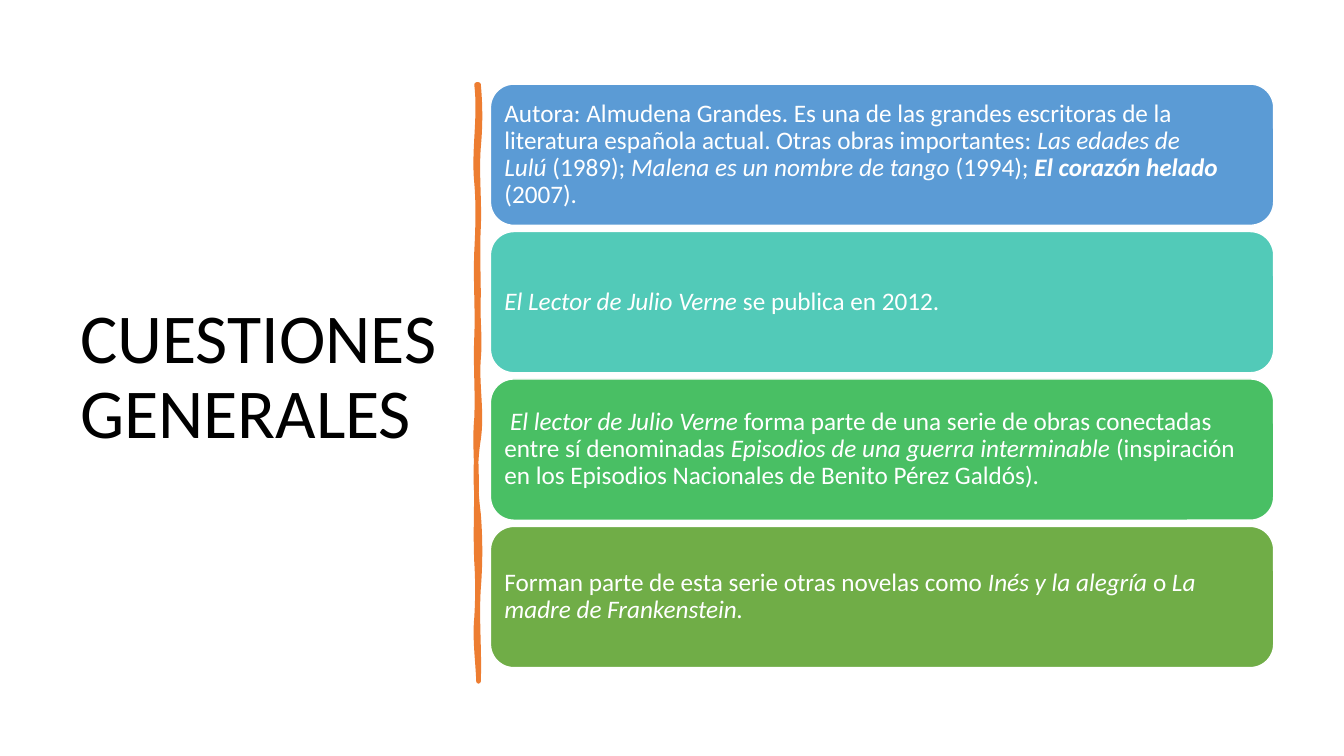
from lxml import etree
from pptx import Presentation
from pptx.dml.color import RGBColor
from pptx.enum.shapes import MSO_SHAPE
from pptx.enum.text import MSO_ANCHOR, PP_ALIGN
from pptx.oxml.ns import qn
from pptx.util import Cm, Pt

ROUND = MSO_SHAPE.ROUNDED_RECTANGLE
MIDDLE = MSO_ANCHOR.MIDDLE
LEFT = PP_ALIGN.LEFT
HARD = chr(160)  # no-break space, typed as ~ in the card texts


def color(code):
    return RGBColor.from_string(code)


def style(run, size, code):
    run.font.name = "Calibri"
    run.font.size = Pt(size)
    run.font.color.rgb = color(code)


deck = Presentation()
deck.slide_width, deck.slide_height = Cm(33.87), Cm(19.05)
slide = deck.slides.add_slide(deck.slide_layouts[6])
shapes = slide.shapes

# Title
title = shapes.add_textbox(Cm(1.77), Cm(1.77), Cm(9.5), Cm(15.52))
frame = title.text_frame
frame.word_wrap = True
frame.vertical_anchor = MIDDLE
frame.margin_right = 0
frame.text = "CUESTIONES GENERALES"
frame.paragraphs[0].line_spacing = 0.9
style(frame.paragraphs[0].runs[0], 50, "000000")

# Wavy divider: each bend holds two sideways pulls and the height where it ends
TOP = 2.13
down = [(0.05, 0.05, 3.71), (-0.05, 0.03, 5.74), (-0.03, 0, 7.47),
        (-0.03, 0.05, 9.04), (-0.05, 0.1, 11.07), (-0.1, -0.08, 12.95),
        (0.05, 0.05, 14.83), (-0.05, 0.03, 17.17)]
up = [(0.03, -0.05, 15.57), (0.03, 0.03, 14.15), (-0.03, 0, 12.12),
      (0, -0.05, 10.54), (0.03, -0.03, 8.51), (0.03, -0.03, 6.35),
      (0.03, 0.05, 4.6), (-0.08, 0.1, TOP)]
pen = shapes.build_freeform(Cm(12.06), Cm(TOP))
start = TOP
for edge, bends in ((12.06, down), (12.01, up)):
    for first, second, end in bends:
        third = (end - start) / 3
        pen.add_line_segments([
            (Cm(edge + first), Cm(start + third)),
            (Cm(edge + second), Cm(end - third)),
            (Cm(edge), Cm(end))], close=False)
        start = end
pen.add_line_segments([], close=True)
wave = pen.convert_to_shape()
wave.shadow.inherit = False
wave.fill.solid()
wave.fill.fore_color.rgb = color("ED7D31")
wave.line.color.rgb = color("ED7D31")
wave.line.width = Pt(3.25)

# Turn every three straight steps into one curve
steps = list(wave._element.iter(qn("a:lnTo")))
for i in range(0, len(steps), 3):
    curve = etree.Element(qn("a:cubicBezTo"))
    steps[i].addprevious(curve)
    for step in steps[i:i + 3]:
        curve.append(step[0])
        step.getparent().remove(step)

# Cards: fill, then text parts with their style (i italic, b bold)
cards = [
    ("5B9BD5", [
        ("Autora: Almudena Grandes. Es una de las grandes escritoras~de la "
         "literatura española actual.~Otras obras importantes: ", ""),
        ("Las edades de Lulú", "i"), ("~(1989);~", ""),
        ("Malena es un nombre de tango ", "i"), ("(1994); ", ""),
        ("El corazón helado ", "bi"), ("(2007).", "")]),
    ("52CAB8", [
        ("El Lector de Julio Verne ", "i"), ("se publica en 2012.", "")]),
    ("49BF64", [
        ("~", ""), ("El lector de Julio Verne ", "i"),
        ("forma parte de una serie de obras~conectadas entre sí "
         "denominadas ", ""),
        ("Episodios de una~guerra interminable ", "i"),
        ("(inspiración en los Episodios Nacionales de Benito Pérez "
         "Galdós).~", "")]),
    ("70AD47", [
        ("Forman parte de esta serie~otras novelas como~", ""),
        ("Inés y la alegría ", "i"), ("o ", ""),
        ("La madre de Frankenstein.", "i")]),
]
for row, (fill, parts) in enumerate(cards):
    card = shapes.add_shape(ROUND, Cm(12.36), Cm(2.12 + 3.715 * row),
                            Cm(19.74), Cm(3.56))
    card.shadow.inherit = False
    card.fill.solid()
    card.fill.fore_color.rgb = color(fill)
    card.line.color.rgb = color("FFFFFF")
    card.line.width = Pt(1)
    frame = card.text_frame
    frame.word_wrap = True
    frame.vertical_anchor = MIDDLE
    frame.margin_left = frame.margin_right = Cm(0.18)
    frame.margin_top = frame.margin_bottom = Cm(0.18)
    para = frame.paragraphs[0]
    para.alignment = LEFT
    para.line_spacing = 0.9
    for text, marks in parts:
        run = para.add_run()
        run.text = text.replace("~", HARD)
        style(run, 18, "FFFFFF")
        run.font.italic = "i" in marks
        run.font.bold = "b" in marks

deck.save("out.pptx")
